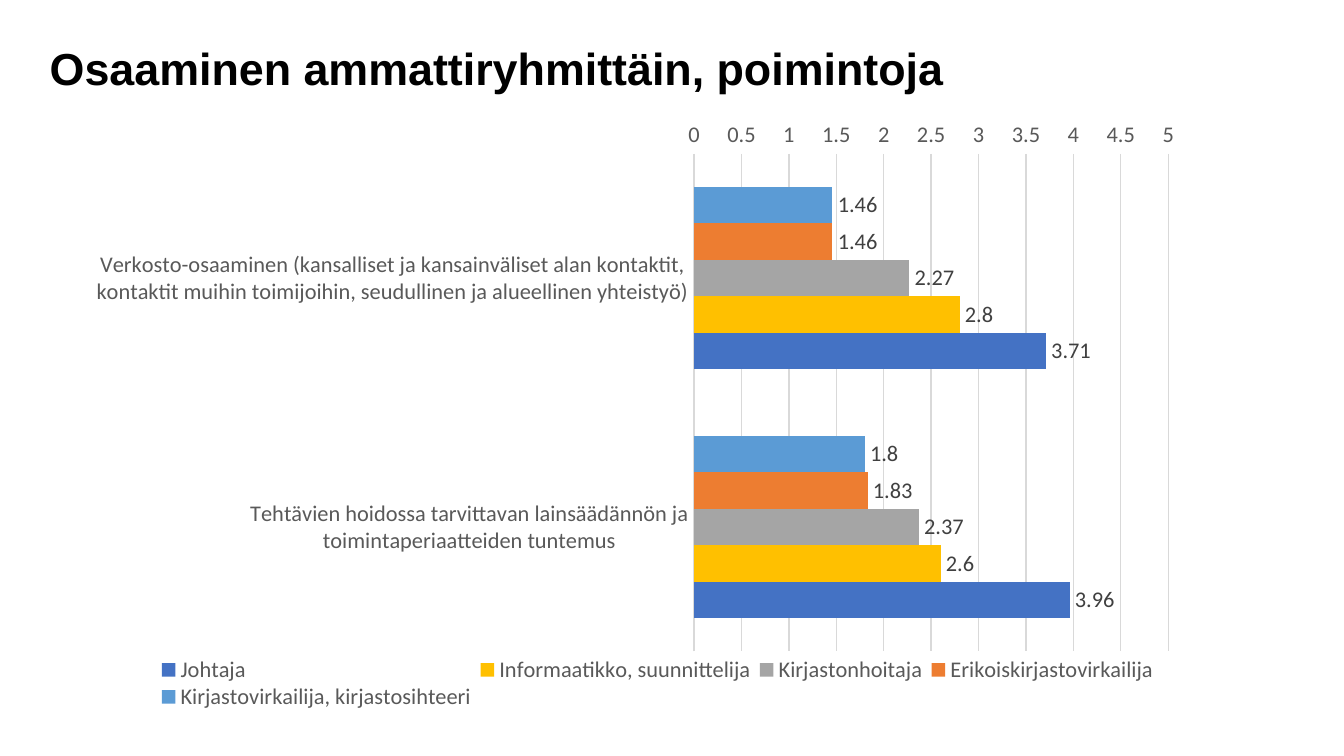
from lxml.etree import Element, SubElement
from pptx import Presentation
from pptx.chart.data import CategoryChartData
from pptx.dml.color import RGBColor
from pptx.enum.chart import XL_CHART_TYPE, XL_LABEL_POSITION, XL_LEGEND_POSITION, XL_TICK_MARK
from pptx.enum.text import MSO_ANCHOR
from pptx.oxml.ns import qn
from pptx.util import Cm, Pt

CATEGORIES = [
    "Verkosto-osaaminen (kansalliset ja kansainväliset alan kontaktit, "
    "kontaktit muihin toimijoihin, seudullinen ja alueellinen yhteistyö)",
    "Tehtävien hoidossa tarvittavan lainsäädännön ja toimintaperiaatteiden tuntemus",
]
SERIES = [
    ("Kirjastovirkailija, kirjastosihteeri", (1.46, 1.8), "5B9BD5"),
    ("Erikoiskirjastovirkailija", (1.46, 1.83), "ED7D31"),
    ("Kirjastonhoitaja", (2.27, 2.37), "A5A5A5"),
    ("Informaatikko, suunnittelija", (2.8, 2.6), "FFC000"),
    ("Johtaja", (3.71, 3.96), "4472C4"),
]


def color(value):
    return RGBColor.from_string(value)


def set_attributes(target, values):
    for name, value in values.items():
        setattr(target, name, value)


def set_layout(parent, index, settings):
    """Give a chart part a fixed place, in fractions of the chart area."""
    for old_layout in parent.findall(qn("c:layout")):
        parent.remove(old_layout)
    layout = Element(qn("c:layout"))
    manual = SubElement(layout, qn("c:manualLayout"))
    for name, value in settings.items():
        SubElement(manual, qn(f"c:{name}")).set("val", str(value))
    parent.insert(index, layout)


class SlideBuilder:
    title_font = {"name": "Arial", "size": Pt(24), "bold": True}
    chart_font = {"name": "Calibri", "size": Pt(12)}
    title_color = "000000"
    axis_color = "595959"
    label_color = "404040"
    grid_color = "D9D9D9"
    edges = {"xMode": "edge", "yMode": "edge"}
    plot_layout = {"layoutTarget": "inner", **edges,
                   "x": 0.5525, "y": 0.073, "w": 0.4225, "h": 0.829}
    legend_layout = {**edges, "x": 0.07, "y": 0.91, "w": 0.9, "h": 0.09}

    def __init__(self, slide):
        self.slide = slide

    def style_font(self, font, values, font_color):
        set_attributes(font, values)
        font.color.rgb = color(font_color)

    def style_line(self, line):
        line.color.rgb = color(self.grid_color)
        line.width = Pt(0.75)

    def title(self, text, left, top, width, height):
        frame = self.slide.shapes.add_textbox(left, top, width, height).text_frame
        set_attributes(frame, {
            "word_wrap": True, "vertical_anchor": MSO_ANCHOR.BOTTOM,
            "margin_left": 0, "margin_right": 0, "margin_top": 0, "margin_bottom": 0,
        })
        paragraph = frame.paragraphs[0]
        paragraph.line_spacing = Pt(33)
        run = paragraph.add_run()
        run.text = text
        self.style_font(run.font, self.title_font, self.title_color)

    def bar_chart(self, categories, series, left, top, width, height):
        data = CategoryChartData()
        data.categories = categories
        for name, values, _ in series:
            data.add_series(name, values)
        chart = self.slide.shapes.add_chart(
            XL_CHART_TYPE.BAR_CLUSTERED, left, top, width, height, data).chart
        chart.has_title = False
        self.style_font(chart.font, self.chart_font, self.title_color)
        self.axes(chart)
        self.legend(chart)
        plot = chart.plots[0]
        set_attributes(plot, {"gap_width": 182, "overlap": 0, "vary_by_categories": False})
        for bars, (_, _, fill_color) in zip(plot.series, series):
            self.bars(bars, fill_color)
        plot_area = next(chart.element.iter(qn("c:plotArea")))
        set_layout(plot_area, 0, self.plot_layout)
        legend = next(chart.element.iter(qn("c:legend")))
        set_layout(legend, 1, self.legend_layout)

    def axes(self, chart):
        for axis in (chart.category_axis, chart.value_axis):
            set_attributes(axis, {
                "major_tick_mark": XL_TICK_MARK.NONE, "minor_tick_mark": XL_TICK_MARK.NONE,
            })
            self.style_font(axis.tick_labels.font, self.chart_font, self.axis_color)
        chart.category_axis.reverse_order = True
        self.style_line(chart.category_axis.format.line)
        value_axis = chart.value_axis
        set_attributes(value_axis, {
            "minimum_scale": 0, "maximum_scale": 5, "major_unit": 0.5,
            "has_major_gridlines": True,
        })
        value_axis.format.line.fill.background()
        self.style_line(value_axis.major_gridlines.format.line)

    def legend(self, chart):
        chart.has_legend = True
        set_attributes(chart.legend, {
            "position": XL_LEGEND_POSITION.BOTTOM, "include_in_layout": False,
        })
        self.style_font(chart.legend.font, self.chart_font, self.axis_color)

    def bars(self, bars, fill_color):
        bars.invert_if_negative = False
        bars.format.fill.solid()
        bars.format.fill.fore_color.rgb = color(fill_color)
        labels = bars.data_labels
        set_attributes(labels, {
            "show_value": True, "position": XL_LABEL_POSITION.OUTSIDE_END,
        })
        self.style_font(labels.font, self.chart_font, self.label_color)


def main():
    presentation = Presentation()
    presentation.slide_width = Cm(25.4)
    presentation.slide_height = Cm(14.29)
    builder = SlideBuilder(presentation.slides.add_slide(presentation.slide_layouts[6]))
    builder.title("Osaaminen ammattiryhmittäin, poimintoja",
                  Cm(0.94), Cm(0.36), Cm(23.88), Cm(1.42))
    builder.bar_chart(CATEGORIES, SERIES, Cm(1.4), Cm(2.08), Cm(21.21), Cm(11.35))
    presentation.save("out.pptx")


if __name__ == "__main__":
    main()
